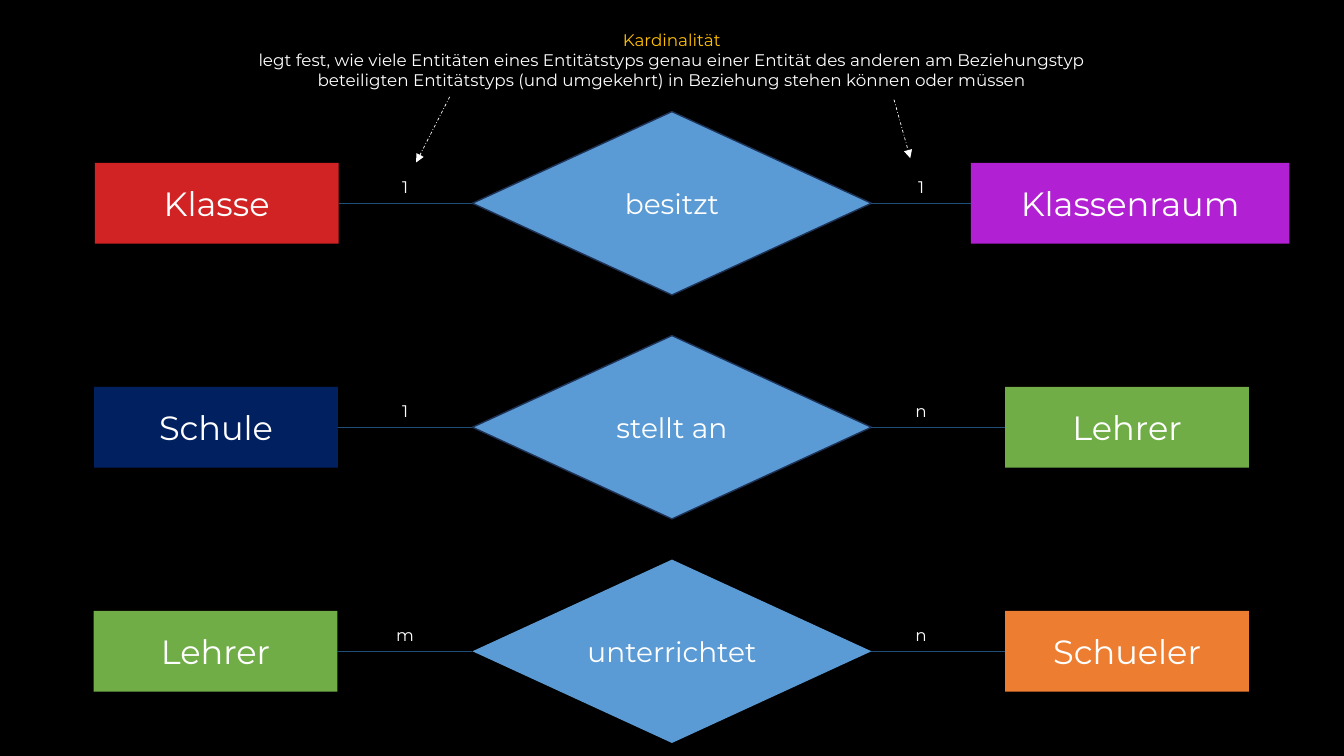
import pptx
import pptx.dml.color
import pptx.enum.dml
import pptx.enum.shapes
import pptx.enum.text
import pptx.oxml
import pptx.oxml.ns
import pptx.util

Pt = pptx.util.Pt
SHAPES = pptx.enum.shapes.MSO_SHAPE
ANCHOR = pptx.enum.text.MSO_ANCHOR

FONT = "Montserrat"
WHITE = "FFFFFF"
CAPTION = [
    ("Kardinalität", "FFC000"),
    ("legt fest, wie viele Entitäten eines Entitätstyps genau einer Entität "
     "des anderen am Beziehungstyp beteiligten Entitätstyps (und umgekehrt) "
     "in Beziehung stehen können oder müssen", WHITE),
]
# Entities are (name, fill, left, width).
RELATIONS = [
    {"from": ("Klasse", "D12323", 67.7, 174.2), "from_count": "1",
     "verb": "besitzt", "outline": "1E3256", "to_count": "1",
     "to": ("Klassenraum", "B220D4", 693.5, 227.5)},
    {"from": ("Schule", "002060", 67.2, 174.2), "from_count": "1",
     "verb": "stellt an", "outline": "1E3256", "to_count": "n",
     "to": ("Lehrer", "70AD47", 718, 174.2)},
    {"from": ("Lehrer", "70AD47", 66.8, 174.2), "from_count": "m",
     "verb": "unterrichtet", "outline": None, "to_count": "n",
     "to": ("Schueler", "ED7D31", 718, 174.2)},
]
POINTERS = [((321.2, 69.2), (297.3, 116)), ((638.6, 71.2), (650.2, 113))]

FIRST_CENTER, ROW_PITCH = 145.2, 160
ENTITY_HEIGHT = 57.6
DIAMOND_LEFT, DIAMOND_WIDTH, DIAMOND_HEIGHT = 337.5, 285, 131
COUNT_LEFTS, COUNT_WIDTH, COUNT_HEIGHT, COUNT_RISE = (264.2, 632.8), 50.4, 21.8, 22.3


def color(value):
    return pptx.dml.color.RGBColor.from_string(value)


def write(box, lines, size, anchor):
    """Fill a shape with centred paragraphs given as (text, colour)."""
    frame = box.text_frame
    frame.word_wrap = True
    frame.vertical_anchor = anchor
    frame.text = "\n".join(text for text, _ in lines)
    for para, (_, shade) in zip(frame.paragraphs, lines):
        para.alignment = pptx.enum.text.PP_ALIGN.CENTER
        para.line_spacing = 1.0
        for span in para.runs:
            span.font.name = FONT
            span.font.size = Pt(size)
            span.font.color.rgb = color(shade)


def add_node(page, kind, bounds, text, size, fill, outline=None):
    node = page.shapes.add_shape(kind, *map(Pt, bounds))
    node.shadow.inherit = False
    node.fill.solid()
    node.fill.fore_color.rgb = color(fill)
    if outline:
        node.line.color.rgb = color(outline)
        node.line.width = Pt(1)
    else:
        node.line.fill.background()
    write(node, [(text, WHITE)], size, ANCHOR.MIDDLE)
    return node


def add_entity(page, entity, center):
    name, fill, left, width = entity
    bounds = (left, center - ENTITY_HEIGHT / 2, width, ENTITY_HEIGHT)
    return add_node(page, SHAPES.RECTANGLE, bounds, name, 24, fill)


def add_line(page, start, end, shade):
    line = page.shapes.add_connector(
        pptx.enum.shapes.MSO_CONNECTOR.STRAIGHT, *map(Pt, start + end))
    line.line.color.rgb = color(shade)
    line.line.width = Pt(0.5)
    properties = line._element.spPr
    properties.append(pptx.oxml.parse_xml(
        "<a:effectLst %s/>" % pptx.oxml.ns.nsdecls("a")))
    return line


def join(page, entity, entity_side, diamond, diamond_side):
    line = add_line(page, (0, 0), (0, 0), "1F4E79")
    line.begin_connect(entity, entity_side)
    line.end_connect(diamond, diamond_side)


def add_relation(page, relation, center):
    source = add_entity(page, relation["from"], center)
    target = add_entity(page, relation["to"], center)
    bounds = (DIAMOND_LEFT, center - DIAMOND_HEIGHT / 2, DIAMOND_WIDTH, DIAMOND_HEIGHT)
    diamond = add_node(page, SHAPES.DIAMOND, bounds, relation["verb"], 20,
                       "5B9BD5", relation["outline"])
    join(page, source, 3, diamond, 1)
    join(page, target, 1, diamond, 3)
    for left, key in zip(COUNT_LEFTS, ("from_count", "to_count")):
        box = page.shapes.add_textbox(
            Pt(left), Pt(center - COUNT_RISE), Pt(COUNT_WIDTH), Pt(COUNT_HEIGHT))
        write(box, [(relation[key], WHITE)], 12, ANCHOR.TOP)


def add_pointer(page, start, end):
    pointer = add_line(page, start, end, WHITE)
    pointer.line.dash_style = pptx.enum.dml.MSO_LINE.DASH_DOT
    pointer.line._get_or_add_ln().append(pptx.oxml.parse_xml(
        '<a:tailEnd type="triangle" %s/>' % pptx.oxml.ns.nsdecls("a")))


def main():
    deck = pptx.Presentation()
    deck.slide_width, deck.slide_height = Pt(960), Pt(540)
    page = deck.slides.add_slide(deck.slide_layouts[5])
    page.background.fill.solid()
    page.background.fill.fore_color.rgb = color("000000")

    caption = page.shapes.title
    caption.left, caption.top = Pt(172.8), Pt(17.3)
    caption.width, caption.height = Pt(614.2), Pt(51)
    write(caption, CAPTION, 12, ANCHOR.TOP)
    caption.text_frame.auto_size = pptx.enum.text.MSO_AUTO_SIZE.SHAPE_TO_FIT_TEXT

    for row, relation in enumerate(RELATIONS):
        add_relation(page, relation, FIRST_CENTER + row * ROW_PITCH)
    for start, end in POINTERS:
        add_pointer(page, start, end)
    deck.save("out.pptx")


if __name__ == "__main__":
    main()
